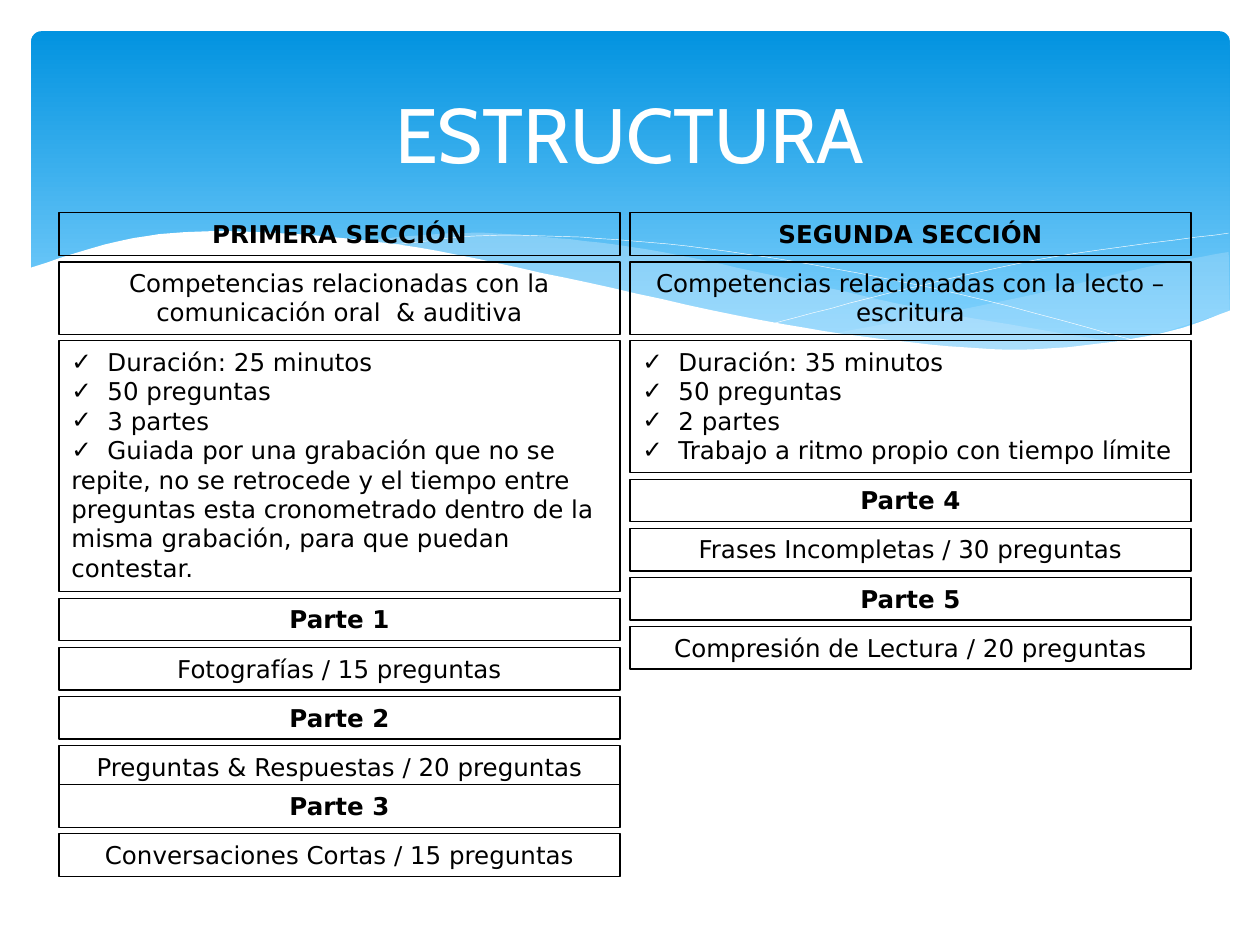
import pptx
import pptx.util
import pptx.dml.color
import pptx.enum.shapes
import pptx.enum.text
import pptx.oxml.ns
import lxml.etree

Cm = pptx.util.Cm
Pt = pptx.util.Pt
qn = pptx.oxml.ns.qn
ALIGN = pptx.enum.text.PP_ALIGN
ANCHOR = pptx.enum.text.MSO_ANCHOR
PRESET = pptx.enum.shapes.MSO_SHAPE


def color(hex_string):
    return pptx.dml.color.RGBColor.from_string(hex_string)


def smooth_curve(knots, steps=8):
    padded = [knots[0], *knots, knots[-1]]
    points = [knots[0]]
    for a, b, c, d in zip(padded, padded[1:], padded[2:], padded[3:]):
        for step in range(1, steps + 1):
            t = step / steps
            points.append(tuple(
                (2 * q + (r - p) * t + (2 * p - 5 * q + 4 * r - s) * t ** 2
                 + (3 * q - p - 3 * r + s) * t ** 3) / 2
                for p, q, r, s in zip(a, b, c, d)))
    return points


deck = pptx.Presentation()
deck.slide_width = Cm(25.4)
deck.slide_height = Cm(19.05)
slide = deck.slides.add_slide(deck.slide_layouts[5])

banner = slide.shapes.add_shape(
    PRESET.ROUNDED_RECTANGLE, Cm(0.63), Cm(0.63), Cm(24.16), Cm(6.86))
banner.adjustments[0] = 0.03
banner.shadow.inherit = False
banner.line.fill.background()
banner.fill.gradient()
banner.fill.gradient_angle = 270
for stop, (position, shade) in zip(banner.fill.gradient_stops, [(0, "0293E0"), (0.9, "83D3FE")]):
    stop.position = position
    stop.color.rgb = color(shade)

right_crest = [(24.77, 5.08), (23.01, 5.41), (20.45, 6.02), (16.79, 6.73)]
right_trough = [(16.79, 6.73), (18.92, 6.99), (20.68, 7.06), (22.78, 6.86), (24.79, 6.27)]
middle_crest = [(22.68, 6.93), (18.82, 6.27), (15.98, 5.64), (13.06, 5.03),
                (10.67, 4.75), (9.17, 4.7), (7.26, 4.85)]
middle_trough = [(7.26, 4.85), (9.73, 5.26), (12.47, 5.89), (15.27, 6.48),
                 (18.01, 6.91), (20.5, 7.06), (22.68, 6.93)]
falling_line = [(7.85, 4.95), (9.83, 4.75), (12.42, 4.83), (15.44, 5.18),
                (19.3, 5.92), (23.04, 6.91)]
rising_line = [(15.57, 6.53), (18.29, 5.82), (21.23, 5.18), (24.77, 4.7)]
page_edge = [(24.82, 6.25), (23.37, 6.73), (20.9, 7.04), (18.44, 6.91), (15.32, 6.45),
             (11.35, 5.59), (8.03, 4.93), (4.9, 4.67), (2.69, 4.8), (0.58, 5.41)]
page_corners = [(0.58, 8.36), (24.82, 8.36)]

waves = [
    (smooth_curve(right_crest) + smooth_curve(right_trough), "C6E7FC", 29),
    (smooth_curve(middle_crest) + smooth_curve(middle_trough), "C6E7FC", 40),
    (smooth_curve(falling_line), None, 100),
    (smooth_curve(rising_line), None, 100),
    (smooth_curve(page_edge) + page_corners, "FFFFFF", 100),
]
for points, shade, opacity in waves:
    start, *rest = [(round(x * 100), round(y * 100)) for x, y in points]
    builder = slide.shapes.build_freeform(*start, scale=Cm(0.01))
    builder.add_line_segments(rest, close=shade is not None)
    wave = builder.convert_to_shape()
    wave.shadow.inherit = False
    if shade is None:
        wave.fill.background()
        wave.line.color.rgb = color("FFFFFF")
        wave.line.width = Pt(0.25)
        continue
    wave.line.fill.background()
    wave.fill.solid()
    wave.fill.fore_color.rgb = color(shade)
    if opacity < 100:
        tint = wave.element.spPr.find(".//" + qn("a:srgbClr"))
        lxml.etree.SubElement(tint, qn("a:alpha"), val=str(opacity * 1000))

title = slide.shapes.title
title.left, title.top, title.width, title.height = Cm(1.27), Cm(0.94), Cm(22.86), Cm(3.48)
title.text_frame.text = "ESTRUCTURA"
title.text_frame.vertical_anchor = ANCHOR.MIDDLE
heading = title.text_frame.paragraphs[0]
heading.alignment = ALIGN.CENTER
heading.runs[0].font.size = Pt(44)
heading.runs[0].font.name = "Cabin"
heading.runs[0].font.color.rgb = color("FFFFFF")
title.element.getparent().append(title.element)

line_height = 0.6
padding = 0.26
gap = 0.13
overlap = -0.07
sections = [
    (1.19, [
        ("heading", "PRIMERA SECCIÓN", 1, gap),
        ("plain", "Competencias relacionadas con la comunicación oral  & auditiva", 2, gap),
        ("list", "  Duración: 25 minutos\n  50 preguntas\n  3 partes\n"
                 "  Guiada por una grabación que no se repite, no se retrocede y el tiempo "
                 "entre preguntas esta cronometrado dentro de la misma grabación, para que "
                 "puedan contestar.", 8, gap),
        ("part", "Parte 1", 1, gap),
        ("plain", "Fotografías / 15 preguntas", 1, gap),
        ("part", "Parte 2", 1, gap),
        ("plain", "Preguntas & Respuestas / 20 preguntas", 1, overlap),
        ("part", "Parte 3", 1, gap),
        ("plain", "Conversaciones Cortas / 15 preguntas", 1, gap)]),
    (12.7, [
        ("heading", "SEGUNDA SECCIÓN", 1, gap),
        ("plain", "Competencias relacionadas con la lecto – escritura", 2, gap),
        ("list", "  Duración: 35 minutos\n  50 preguntas\n  2 partes\n"
                 "  Trabajo a ritmo propio con tiempo límite", 4, gap),
        ("part", "Parte 4", 1, gap),
        ("plain", "Frases Incompletas / 30 preguntas", 1, gap),
        ("part", "Parte 5", 1, gap),
        ("plain", "Compresión de Lectura / 20 preguntas", 1, gap)]),
]
for left, rows in sections:
    top = 4.29
    for role, wording, line_count, space_below in rows:
        height = line_count * line_height + padding
        row = slide.shapes.add_shape(
            PRESET.RECTANGLE, Cm(left), Cm(top), Cm(11.31), Cm(height))
        top += height + space_below
        row.shadow.inherit = False
        row.line.color.rgb = color("000000")
        row.line.width = Pt(0.75)
        if role == "part":
            row.fill.solid()
            row.fill.fore_color.rgb = color("FFFFFF")
        else:
            row.fill.background()
        frame = row.text_frame
        frame.text = wording
        frame.word_wrap = True
        frame.auto_size = pptx.enum.text.MSO_AUTO_SIZE.SHAPE_TO_FIT_TEXT
        frame.vertical_anchor = ANCHOR.TOP
        for paragraph in frame.paragraphs:
            paragraph.alignment = ALIGN.LEFT if role == "list" else ALIGN.CENTER
            font = paragraph.runs[0].font
            font.size = Pt(14)
            font.name = "DejaVu Sans"
            font.bold = role in ("heading", "part")
            font.color.rgb = color("000000")
        if role == "list":
            for properties in row.element.iter(qn("a:pPr")):
                lxml.etree.SubElement(properties, qn("a:buFont"), typeface="DejaVu Sans")
                lxml.etree.SubElement(properties, qn("a:buChar"), char="✓")

deck.save("out.pptx")
